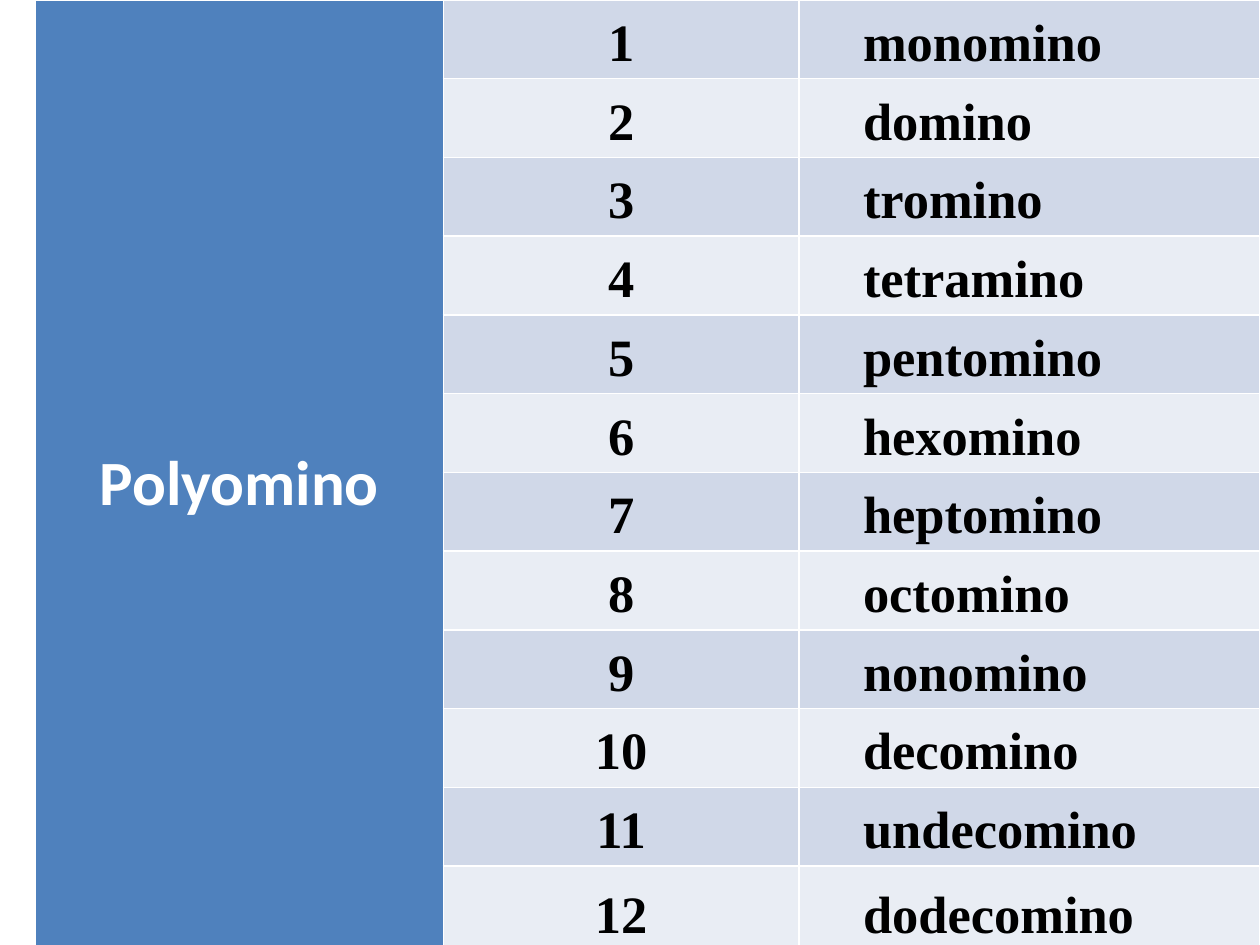
import pptx
import pptx.util
import pptx.dml.color
import pptx.enum.text
import pptx.oxml
import pptx.oxml.ns

Inches, Pt = pptx.util.Inches, pptx.util.Pt
Align = pptx.enum.text.PP_ALIGN

WIDE, HIGH = 10, 7.5
LEFT = 0.28
COLS = [3.24, 2.82, 3.66]
HUES = {"head": "4F81BD", "odd": "D0D8E8", "even": "E9EDF4",
        "white": "FFFFFF", "black": "000000"}
NAMES = ["monomino", "domino", "tromino", "tetramino", "pentomino",
         "hexomino", "heptomino", "octomino", "nonomino", "decomino",
         "undecomino", "dodecomino"]


def color(name):
    return pptx.dml.color.RGBColor.from_string(HUES[name])


def edge(cell):
    """Draw a thin white line on all four sides of a cell."""
    props = cell._tc.get_or_add_tcPr()
    for side in ("lnL", "lnR", "lnT", "lnB"):
        props.append(pptx.oxml.parse_xml(
            f'<a:{side} {pptx.oxml.ns.nsdecls("a")} w="{Pt(1)}"><a:solidFill>'
            f'<a:srgbClr val="{HUES["white"]}"/></a:solidFill></a:{side}>'))


def paint(cell, fill):
    edge(cell)
    cell.fill.solid()
    cell.fill.fore_color.rgb = color(fill)
    cell.vertical_anchor = pptx.enum.text.MSO_ANCHOR.MIDDLE
    cell.margin_left = cell.margin_right = Inches(0.01)
    cell.margin_top = cell.margin_bottom = Inches(0.01)


def write(cell, text, size, face, ink, indent=0):
    """Centre the text, or set it left at an indent in inches."""
    par = cell.text_frame.paragraphs[0]
    par.text = text
    par.line_spacing = 1.15
    if indent:
        par.level = 1
        props = par._p.get_or_add_pPr()
        props.set("marL", str(Inches(indent)))
        props.set("indent", "0")
    par.alignment = Align.LEFT if indent else Align.CENTER
    font = par.runs[0].font
    font.size, font.name, font.bold = Pt(size), face, True
    font.color.rgb = color(ink)


def main():
    deck = pptx.Presentation()
    deck.slide_width, deck.slide_height = Inches(WIDE), Inches(HIGH)
    slide = deck.slides.add_slide(deck.slide_layouts[6])

    # Table grid
    count = len(NAMES)
    table = slide.shapes.add_table(
        count, len(COLS), Inches(LEFT), 0,
        Inches(sum(COLS)), Inches(HIGH)).table
    table.first_row = table.horz_banding = False
    for col, width in zip(table.columns, COLS):
        col.width = Inches(width)

    # Heading over all rows
    head = table.cell(0, 0)
    head.merge(table.cell(count - 1, 0))
    for row in range(count):
        paint(table.cell(row, 0), "head")
    write(head, "Polyomino", 36, "Calibri", "white")

    # Numbers and names in bands
    for row, name in enumerate(NAMES):
        band = "even" if row % 2 else "odd"
        for col, text, indent in ((1, str(row + 1), 0), (2, name, 0.5)):
            cell = table.cell(row, col)
            paint(cell, band)
            write(cell, text, 30, "Times New Roman", "black", indent)

    deck.save("out.pptx")


if __name__ == "__main__":
    main()
